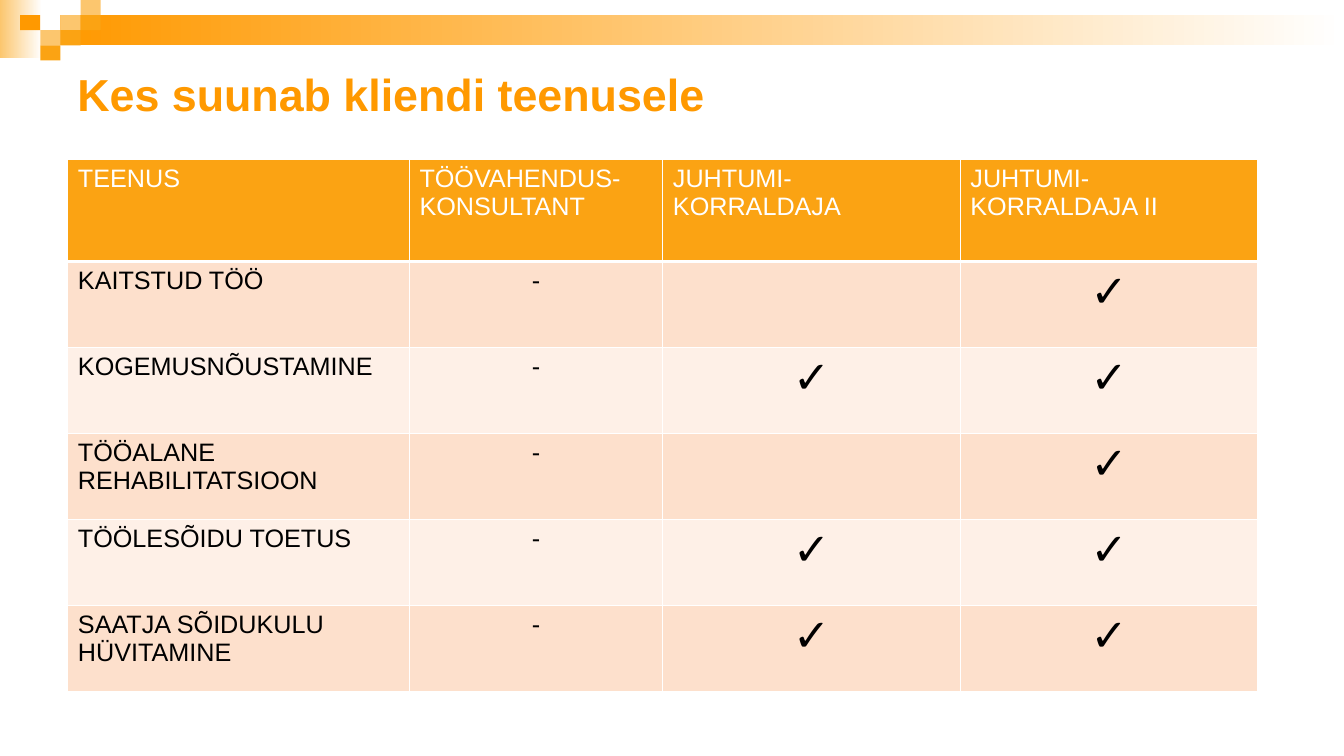
from dataclasses import dataclass

from lxml import etree
from pptx import Presentation
from pptx.dml.color import RGBColor
from pptx.enum.shapes import MSO_SHAPE
from pptx.enum.text import MSO_ANCHOR, PP_ALIGN
from pptx.oxml.ns import qn
from pptx.util import Pt

RECTANGLE = MSO_SHAPE.RECTANGLE
MIDDLE = MSO_ANCHOR.MIDDLE
LEFT, CENTER = PP_ALIGN.LEFT, PP_ALIGN.CENTER


@dataclass(frozen=True)
class Theme:
    font: str = "Arial"
    orange: str = "FF9900"
    amber: str = "FBA313"
    light: str = "FCC66E"
    white: str = "FFFFFF"
    black: str = "000000"
    bands: tuple = ("FDE0CC", "FEF0E7")
    title_size: int = 32
    table_size: int = 18
    check_size: int = 32


THEME = Theme()
CHECK = "✓"
HEADERS = ["TEENUS", "TÖÖVAHENDUS-KONSULTANT", "JUHTUMI-\nKORRALDAJA", "JUHTUMI-KORRALDAJA II"]
SERVICES = [
    ["KAITSTUD TÖÖ", "-", "", CHECK],
    ["KOGEMUSNÕUSTAMINE", "-", CHECK, CHECK],
    ["TÖÖALANE REHABILITATSIOON", "-", "", CHECK],
    ["TÖÖLESÕIDU TOETUS", "-", CHECK, CHECK],
    ["SAATJA SÕIDUKULU HÜVITAMINE", "-", CHECK, CHECK],
]


def add_span(para, text, size, color, bold=False):
    span = para.add_run()
    span.text = text
    span.font.name = THEME.font
    span.font.size = Pt(size)
    span.font.bold = bold
    span.font.color.rgb = RGBColor.from_string(color)


def add_block(page, box, color, fade=False):
    block = page.shapes.add_shape(RECTANGLE, *map(Pt, box))
    block.shadow.inherit = False
    block.line.fill.background()
    if fade:
        block.fill.gradient()
        block.fill.gradient_angle = 0
        for stop, shade in zip(block.fill.gradient_stops, (color, THEME.white)):
            stop.color.rgb = RGBColor.from_string(shade)
    else:
        block.fill.solid()
        block.fill.fore_color.rgb = RGBColor.from_string(color)


def add_banner(page, box):
    left, top, width, height = box
    tile_width, tile_height = 14.4, height / 4
    bar_left = 3 * tile_width
    add_block(page, (left, top, 30, height - 1.4), THEME.light, fade=True)
    add_block(page, (left + bar_left, top + tile_height, width - bar_left, 2 * tile_height),
              THEME.orange, fade=True)
    tiles = [
        (3, 1, THEME.light), (4, 0, THEME.light), (4, 1, THEME.amber), (2, 2, THEME.light),
        (1, 1, THEME.orange), (3, 2, THEME.amber), (2, 3, THEME.amber),
    ]
    for column, row, color in tiles:
        add_block(page, (left + column * tile_width, top + row * tile_height,
                         tile_width, tile_height), color)


def add_title(page, box, text):
    title = page.shapes.title
    title.left, title.top, title.width, title.height = map(Pt, box)
    frame = title.text_frame
    frame.word_wrap = True
    frame.vertical_anchor = MIDDLE
    para = frame.paragraphs[0]
    para.alignment = LEFT
    add_span(para, text, THEME.title_size, THEME.orange, bold=True)


def set_borders(cell, bottom):
    properties = cell._tc.get_or_add_tcPr()
    for side, weight in (("L", 1), ("R", 1), ("T", 1), ("B", bottom)):
        line = etree.SubElement(properties, qn(f"a:ln{side}"), w=str(Pt(weight)))
        fill = etree.SubElement(line, qn("a:solidFill"))
        etree.SubElement(fill, qn("a:srgbClr"), val=THEME.white)


def fill_cell(cell, text, background, color, alignment, bottom=1):
    set_borders(cell, bottom)
    cell.fill.solid()
    cell.fill.fore_color.rgb = RGBColor.from_string(background)
    size = THEME.check_size if text == CHECK else THEME.table_size
    for index, words in enumerate(text.split("\n")):
        frame = cell.text_frame
        para = frame.add_paragraph() if index else frame.paragraphs[0]
        para.alignment = alignment
        if words:
            add_span(para, words, size, color)


def add_service_table(page, box):
    left, top, width, height = box
    header_height = 72.8
    row_height = (height - header_height) / len(SERVICES)
    table = page.shapes.add_table(len(SERVICES) + 1, len(HEADERS), *map(Pt, box)).table
    for column, share in zip(table.columns, (0.287, 0.213, 0.25, 0.25)):
        column.width = Pt(width * share)
    for index, row in enumerate(table.rows):
        row.height = Pt(row_height if index else header_height)
    for column, text in enumerate(HEADERS):
        fill_cell(table.cell(0, column), text, THEME.amber, THEME.white, LEFT, bottom=3)
    for row, service in enumerate(SERVICES):
        for column, text in enumerate(service):
            fill_cell(table.cell(row + 1, column), text, THEME.bands[row % 2],
                      THEME.black, CENTER if column else LEFT)


def main():
    deck = Presentation()
    deck.slide_width, deck.slide_height = Pt(960), Pt(540)
    page = deck.slides.add_slide(deck.slide_layouts[5])
    add_banner(page, (0, 0, 960, 43.2))
    add_title(page, (48, 35.5, 864, 63), "Kes suunab kliendi teenusele")
    add_service_table(page, (48.5, 114, 850, 380))
    deck.save("out.pptx")


if __name__ == "__main__":
    main()
